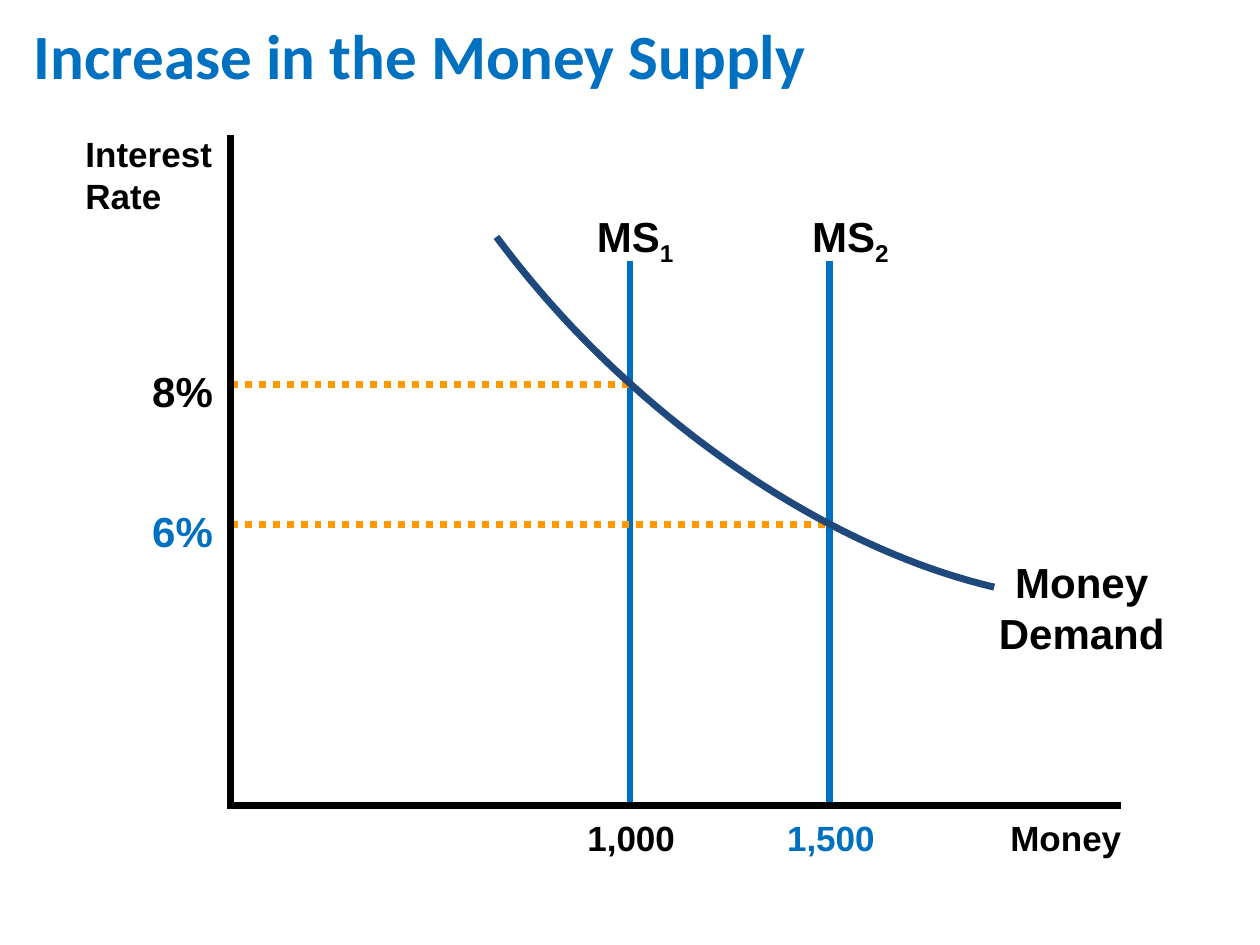
from lxml.etree import SubElement
from pptx import Presentation
from pptx.dml.color import RGBColor
from pptx.enum.dml import MSO_LINE
from pptx.enum.shapes import MSO_CONNECTOR
from pptx.enum.text import PP_ALIGN
from pptx.oxml.ns import qn
from pptx.util import Inches, Pt

BLACK = RGBColor(0, 0, 0)
WHITE = RGBColor(255, 255, 255)
BLUE = RGBColor(0x00, 0x70, 0xC0)
NAVY = RGBColor(0x1F, 0x49, 0x7D)
ORANGE = RGBColor(0xFF, 0x99, 0x00)

PLOT = (1.83, 1.07, 7.07, 5.32)
QUANTITY_UNIT = 3.17 / 1000  # inches per unit of money
RATE_UNIT, BASE_RATE = 3.34 / 6, 2  # inches per percent, rate at the bottom axis
MARKETS = [  # subscript, quantity, rate, colour, left of name, width of name
    ("1", 1000, 8, BLACK, 4.33, 1.42),
    ("2", 1500, 6, BLUE, 6.0, 1.5),
]
# Two cubic Bezier pieces, measured from the plot's top left corner
DEMAND = [
    [(6.06, 3.59), (5.08, 3.36), (4.02, 2.76), (3.10, 1.91)],
    [(3.10, 1.91), (2.73, 1.57), (2.40, 1.20), (2.11, 0.81)],
]


def add_text(s, box, text, size, color=BLACK, align=PP_ALIGN.LEFT, font="Arial", sub=""):
    """Add a bold text box, with an optional subscript after the text."""
    sp = s.shapes.add_textbox(*map(Inches, box))
    tf = sp.text_frame
    tf.word_wrap = True
    p = tf.paragraphs[0]
    p.alignment = align
    for part in filter(None, (text, sub)):
        r = p.add_run()
        r.text = part
        r.font.name, r.font.size, r.font.bold = font, Pt(size), True
        r.font.color.rgb = color
    if sub:
        r.font._element.set("baseline", "-25000")
    return sp


def add_line(s, x1, y1, x2, y2, color, dash=None):
    line = s.shapes.add_connector(MSO_CONNECTOR.STRAIGHT, *map(Inches, (x1, y1, x2, y2)))
    line.line.color.rgb = color
    line.line.width = Pt(4)
    if dash:
        line.line.dash_style = dash
    SubElement(line._element.spPr, qn("a:effectLst"))


def bezier(points, steps=30):
    a, b, c, d = points
    for i in range(steps + 1):
        t = i / steps
        u = 1 - t
        yield tuple(u**3 * a[k] + 3 * u * u * t * b[k] + 3 * u * t * t * c[k] + t**3 * d[k]
                    for k in (0, 1))


def add_title(s, box):
    sp = add_text(s, box, "Increase in the Money Supply", 36, BLUE, font="Calibri")
    sp.fill.solid()
    sp.fill.fore_color.rgb = WHITE


def add_markets(s, box):
    """Draw each supply line, its dotted rate line and their labels."""
    left, top, _, height = box
    bottom = top + height
    for sub, quantity, rate, color, name_left, name_width in MARKETS:
        x = left + quantity * QUANTITY_UNIT
        y = bottom - (rate - BASE_RATE) * RATE_UNIT
        add_line(s, x, top + 1, x, bottom, BLUE)
        add_line(s, left, y, x, y, ORANGE, MSO_LINE.ROUND_DOT)
        add_text(s, (name_left, top + 0.55, name_width, 0.47), "MS", 24,
                 align=PP_ALIGN.CENTER, sub=sub)
        add_text(s, (left - 0.72, y - 0.2, 0.87, 0.47), f"{rate}%", 24, color)
        add_text(s, (x - 0.74, bottom + 0.04, 1.5, 0.4), f"{quantity:,}", 20, color,
                 PP_ALIGN.CENTER)


def add_axes(s, box):
    left, top, width, height = box
    bottom = top + height
    add_line(s, left, bottom, left + width, bottom, BLACK)
    add_line(s, left, top, left, bottom + 0.03, BLACK)
    add_text(s, (left - 1.25, top - 0.07, 1.27, 0.71), "Interest Rate", 20)
    add_text(s, (left + width - 0.98, bottom + 0.04, 1.17, 0.4), "Money", 20)


def add_demand(s, box):
    left, top = box[:2]
    points = [(Inches(left + x), Inches(top + y))
              for piece in DEMAND for x, y in bezier(piece)]
    builder = s.shapes.build_freeform(*points[0])
    builder.add_line_segments(points[1:], close=False)
    curve = builder.convert_to_shape()
    curve.shadow.inherit = False
    curve.fill.background()
    curve.line.color.rgb = NAVY
    curve.line.width = Pt(4)
    add_text(s, (left + 5.92, top + 3.3, 1.67, 0.83), "Money Demand", 24,
             align=PP_ALIGN.CENTER)


def main():
    prs = Presentation()
    prs.slide_width, prs.slide_height = Inches(10), Inches(7.5)
    s = prs.slides.add_slide(prs.slide_layouts[6])
    add_title(s, (0.17, 0.08, 7.58, 0.71))
    add_markets(s, PLOT)
    add_axes(s, PLOT)
    add_demand(s, PLOT)
    prs.save("out.pptx")


if __name__ == "__main__":
    main()
